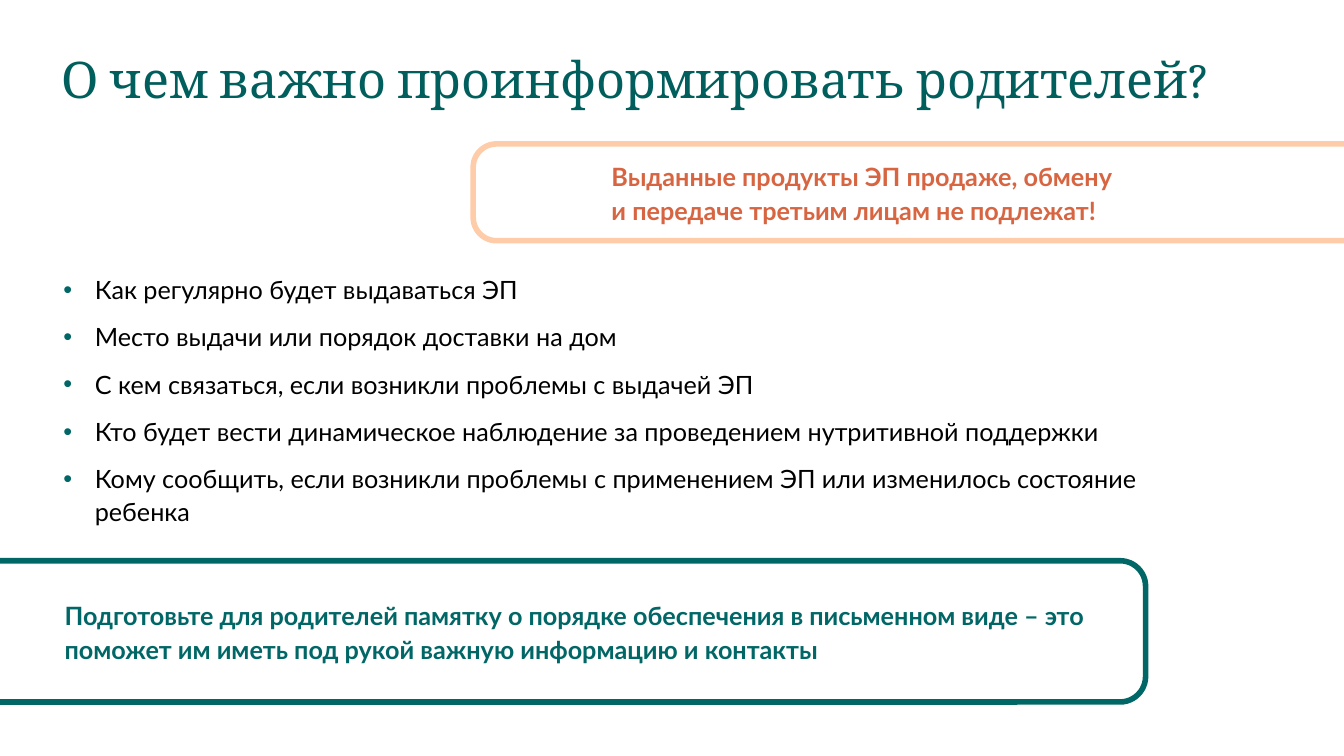
from dataclasses import dataclass

from lxml import etree
from pptx import Presentation
from pptx.dml.color import RGBColor
from pptx.enum.shapes import MSO_SHAPE
from pptx.enum.text import MSO_ANCHOR, MSO_AUTO_SIZE, PP_ALIGN
from pptx.oxml.ns import qn
from pptx.util import Cm, Pt

FRAME = MSO_SHAPE.ROUND_2_SAME_RECTANGLE
TOP, MIDDLE = MSO_ANCHOR.TOP, MSO_ANCHOR.MIDDLE
LEFT = PP_ALIGN.LEFT
NO_FIT = MSO_AUTO_SIZE.NONE


@dataclass(frozen=True)
class Theme:
    title_color: str = "005E5C"
    teal: str = "006766"
    peach: str = "FFCCA9"
    orange: str = "D86541"
    black: str = "000000"
    title_font: str = "Cambria"
    body_font: str = "Lato"
    title_size: int = 36
    body_size: int = 18
    frame_width: int = 4


THEME = Theme()


def place(sp, left, top, width, height):
    sp.left, sp.top, sp.width, sp.height = Cm(left), Cm(top), Cm(width), Cm(height)


def format_text(tf, color, font=THEME.body_font, size=THEME.body_size,
                bold=False, spacing=1.1, anchor=TOP, insets=(0.25, 0.13)):
    tf.word_wrap = True
    tf.auto_size = NO_FIT
    tf.vertical_anchor = anchor
    tf.margin_left, tf.margin_top = Cm(insets[0]), Cm(insets[1])
    tf.margin_right, tf.margin_bottom = Cm(0.25), Cm(0.13)
    for p in tf.paragraphs:
        p.alignment = LEFT
        p.line_spacing = spacing
        p.space_before = Pt(0)
        for r in p.runs:
            r.font.name = font
            r.font.size = Pt(size)
            r.font.bold = bold
            r.font.color.rgb = RGBColor.from_string(color)


prs = Presentation()
prs.slide_width, prs.slide_height = Cm(33.87), Cm(19.05)
slide = prs.slides.add_slide(prs.slide_layouts[1])
title, body = slide.placeholders

# Title
place(title, 1.55, 1.07, 29.31, 1.8)
title.text_frame.text = "О чем важно проинформировать родителей?"
format_text(title.text_frame, THEME.title_color, THEME.title_font,
            THEME.title_size, spacing=1.0, insets=(0, 0.13))

# Bulleted list
topics = [
    "Как регулярно будет выдаваться ЭП",
    "Место выдачи или порядок доставки на дом",
    "С кем связаться, если возникли проблемы с выдачей ЭП",
    "Кто будет вести динамическое наблюдение за проведением нутритивной поддержки",
    "Кому сообщить, если возникли проблемы с применением ЭП или изменилось состояние ребенка",
]
place(body, 1.35, 6.71, 28.27, 6.76)
body.text_frame.text = "\n".join(topics)
for p in body.text_frame.paragraphs:
    pPr = p._p.get_or_add_pPr()
    pPr.set("marL", str(Cm(0.79)))
    pPr.set("indent", str(-Cm(0.79)))
    bullet_color = etree.SubElement(pPr, qn("a:buClr"))
    etree.SubElement(bullet_color, qn("a:srgbClr"), val=THEME.teal)
    etree.SubElement(pPr, qn("a:buFont"), typeface="Arial")
    etree.SubElement(pPr, qn("a:buChar"), char="•")
    p.space_after = Pt(10)
format_text(body.text_frame, THEME.black)

# Frames bleeding off the left and right edges
frames = [
    (12.04, 0.86, 3.56, 30.1, 90, 0.181, THEME.teal),
    (22.2, -6.65, 2.44, 22.99, 270, 0.241, THEME.peach),
]
for left, top, width, height, rotation, radius, color in frames:
    sp = slide.shapes.add_shape(FRAME, Cm(left), Cm(top), Cm(width), Cm(height))
    sp.rotation = rotation
    sp.adjustments[0], sp.adjustments[1] = radius, 0
    sp.shadow.inherit = False
    sp.fill.background()
    sp.line.color.rgb = RGBColor.from_string(color)
    sp.line.width = Pt(THEME.frame_width)

# Messages inside the frames
messages = [
    ("Выданные продукты ЭП продаже, обмену\vи передаче третьим лицам не подлежат!",
     (15.16, 3.61, 15.1, 2.46), THEME.orange, MIDDLE, (0.25, 0.13)),
    ("Подготовьте для родителей памятку о порядке обеспечения в письменном виде – "
     "это поможет им иметь под рукой важную информацию и контакты",
     (1.63, 15.06, 25.98, 3.1), THEME.teal, TOP, (0, 0)),
]
for text, box, color, anchor, insets in messages:
    sp = slide.shapes.add_textbox(*map(Cm, box))
    sp.text_frame.text = text
    format_text(sp.text_frame, color, bold=True, anchor=anchor, insets=insets)

prs.save("out.pptx")
